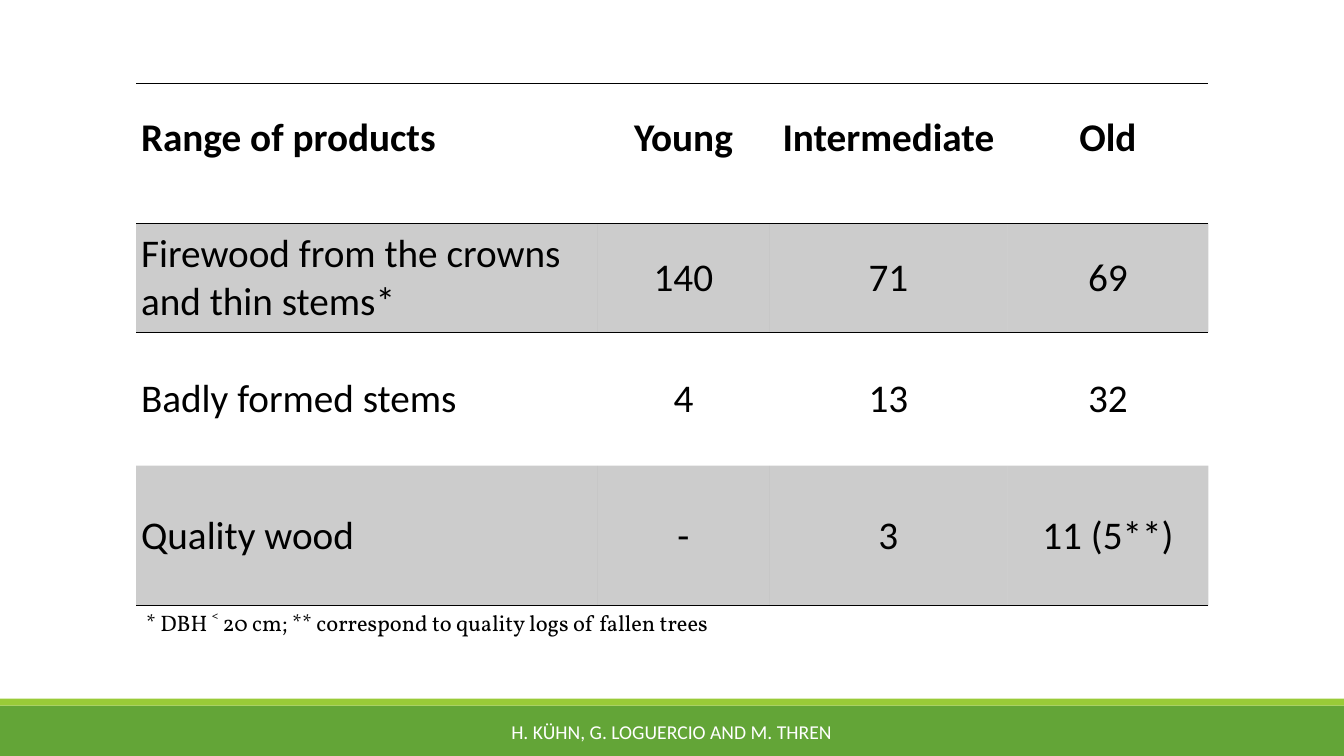
from lxml.etree import SubElement
from pptx import Presentation
from pptx.dml.color import RGBColor
from pptx.enum.shapes import MSO_SHAPE as Shape
from pptx.enum.text import MSO_ANCHOR as Anchor, MSO_AUTO_SIZE as AutoSize, PP_ALIGN as Align
from pptx.oxml.ns import qn
from pptx.util import Pt

BLACK = RGBColor(0x00, 0x00, 0x00)
WHITE = RGBColor(0xFF, 0xFF, 0xFF)
GREEN = RGBColor(0x63, 0xA5, 0x37)
LIME = RGBColor(0x99, 0xCB, 0x38)

PRODUCTS = [
    ("Range of products", "Young", "Intermediate", "Old"),
    ("Firewood from the crowns and thin stems*", "140", "71", "69"),
    ("Badly formed stems", "4", "13", "32"),
    ("Quality wood", "-", "3", "11 (5**)"),
]
FOOTNOTE = "* DBH ˂ 20 cm; ** correspond to quality logs of fallen trees"
AUTHORS = "H. KÜHN, G. LOGUERCIO AND M. THREN"

SLIDE_WIDTH, SLIDE_HEIGHT = 960, 540
TABLE_LEFT, TABLE_TOP = 97.2, 59.5
COLUMN_WIDTHS = (329.8, 122.4, 170.4, 143.3)
ROW_HEIGHTS = (100, 78, 95.2, 100)
BANDS = [(504, 36, GREEN), (499, 5, LIME)]  # top, height, colour
NO_STYLE_NO_GRID = "{2D5ABB26-0587-4C30-8999-92F81FD0307C}"


def write(frame, text, size=28, font="Calibri", color=BLACK, bold=False,
          align=Align.LEFT, line_spacing=None, space=0):
    paragraph = frame.paragraphs[0]
    paragraph.alignment = align
    paragraph.line_spacing = line_spacing
    paragraph.space_before = paragraph.space_after = Pt(space)
    run = paragraph.add_run()
    run.text = text
    run.font.name, run.font.size, run.font.bold = font, Pt(size), bold
    run.font.color.rgb = color


def add_text(slide, box, text, auto_size=AutoSize.NONE, **text_format):
    frame = slide.shapes.add_textbox(*map(Pt, box)).text_frame
    frame.word_wrap = True
    frame.auto_size = auto_size
    frame.vertical_anchor = Anchor.MIDDLE
    write(frame, text, **text_format)


def add_border(cell, side):
    line = SubElement(cell._tc.get_or_add_tcPr(), qn(f"a:ln{side}"), w=str(Pt(1)))
    fill = SubElement(line, qn("a:solidFill"))
    SubElement(fill, qn("a:srgbClr"), val=str(BLACK))


def shade(cell):
    """Fill the cell with black at 20 % opacity."""
    cell.fill.solid()
    cell.fill.fore_color.rgb = BLACK
    color = cell._tc.tcPr.find(f"{qn('a:solidFill')}/{qn('a:srgbClr')}")
    SubElement(color, qn("a:alpha"), val="20000")


def add_products_table(slide):
    table = slide.shapes.add_table(
        len(PRODUCTS), len(COLUMN_WIDTHS), Pt(TABLE_LEFT), Pt(TABLE_TOP),
        Pt(sum(COLUMN_WIDTHS)), Pt(sum(ROW_HEIGHTS))).table
    table.first_row = table.horz_banding = False
    table._tbl.tblPr.find(qn("a:tableStyleId")).text = NO_STYLE_NO_GRID
    for column, width in zip(table.columns, COLUMN_WIDTHS):
        column.width = Pt(width)
    for row, height in zip(table.rows, ROW_HEIGHTS):
        row.height = Pt(height)

    last_row = len(PRODUCTS) - 1
    for row_index, values in enumerate(PRODUCTS):
        header = row_index == 0
        for column_index, value in enumerate(values):
            cell = table.cell(row_index, column_index)
            cell.vertical_anchor = Anchor.MIDDLE
            cell.margin_left = cell.margin_right = Pt(3.6)
            cell.margin_top = cell.margin_bottom = 0
            write(cell.text_frame, value, bold=header,
                  align=Align.CENTER if column_index else Align.LEFT,
                  line_spacing=Pt(13) if header else None,
                  space=0 if header else 6)
            if row_index <= 1:
                add_border(cell, "T")
            if row_index in (0, last_row):
                add_border(cell, "B")
            if row_index % 2:
                shade(cell)
            else:
                cell.fill.background()


def main():
    presentation = Presentation()
    presentation.slide_width, presentation.slide_height = Pt(SLIDE_WIDTH), Pt(SLIDE_HEIGHT)
    slide = presentation.slides.add_slide(presentation.slide_layouts[6])

    for top, height, color in BANDS:
        band = slide.shapes.add_shape(
            Shape.RECTANGLE, 0, Pt(top), Pt(SLIDE_WIDTH), Pt(height))
        band.shadow.inherit = False
        band.fill.solid()
        band.fill.fore_color.rgb = color
        band.line.fill.background()

    add_text(slide, (290, 508.5, 379.5, 28.8), AUTHORS,
             size=14, color=WHITE, align=Align.CENTER)
    add_products_table(slide)
    add_text(slide, (TABLE_LEFT, 431.5, 588, 26.6), FOOTNOTE,
             auto_size=AutoSize.SHAPE_TO_FIT_TEXT, size=16, font="Vollkorn")

    presentation.save("out.pptx")


if __name__ == "__main__":
    main()
